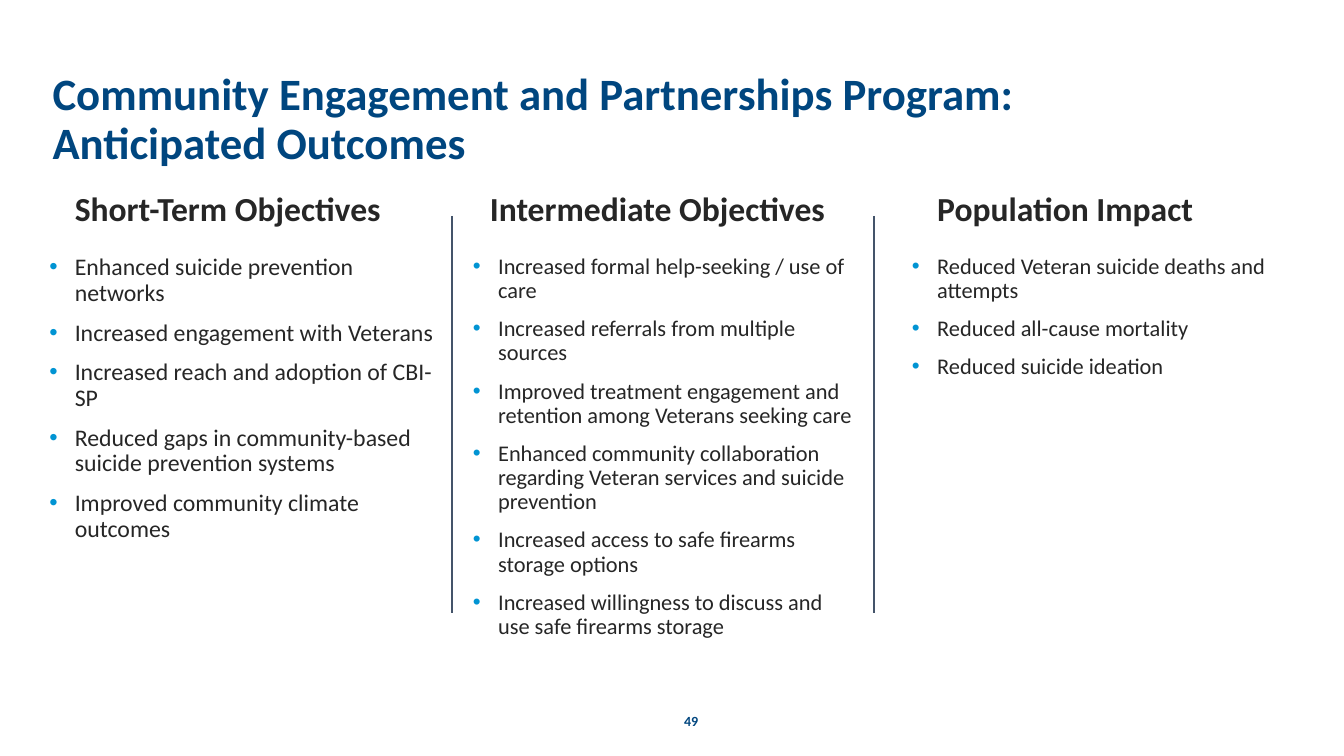
from lxml import etree
from pptx import Presentation
from pptx.dml.color import RGBColor
from pptx.enum.shapes import MSO_CONNECTOR
from pptx.enum.text import MSO_ANCHOR, MSO_AUTO_SIZE, PP_ALIGN
from pptx.oxml.ns import qn
from pptx.util import Cm, Pt

TOP, MIDDLE, BOTTOM = MSO_ANCHOR.TOP, MSO_ANCHOR.MIDDLE, MSO_ANCHOR.BOTTOM
LEFT, CENTER = PP_ALIGN.LEFT, PP_ALIGN.CENTER
FIXED = MSO_AUTO_SIZE.NONE
LINE = MSO_CONNECTOR.STRAIGHT
FONT = "Calibri"
NAVY, BLUE, INK, SLATE = "00467F", "0194D3", "262626", "44546A"
HEAD_TOP, LIST_TOP = 4.29, 6.3

COLUMNS = [
    {
        "head": "Short-Term Objectives",
        "head_x": 1.63, "head_w": 8.81,
        "box": (0.99, LIST_TOP, 10.39, 10.11),
        "size": 17,
        "items": [
            "Enhanced suicide prevention networks",
            "Increased engagement with Veterans",
            "Increased reach and adoption of CBI-SP",
            "Reduced gaps in community-based suicide prevention systems",
            "Improved community climate outcomes",
        ],
    },
    {
        "head": "Intermediate Objectives",
        "head_x": 12.09, "head_w": 9.22,
        "box": (11.66, LIST_TOP, 10.11, 10.67),
        "size": 16,
        "items": [
            "Increased formal help-seeking / use of care",
            "Increased referrals from multiple sources",
            "Improved treatment engagement and retention among Veterans seeking care ",
            "Enhanced community collaboration regarding Veteran services and suicide prevention",
            "Increased access to safe firearms storage options",
            "Increased willingness to discuss and use safe firearms storage",
        ],
    },
    {
        "head": "Population Impact",
        "head_x": 23.37, "head_w": 7.44,
        "box": (22.73, LIST_TOP, 10.34, 3.99),
        "size": 16,
        "items": [
            "Reduced Veteran suicide deaths and attempts",
            "Reduced all-cause mortality",
            "Reduced suicide ideation",
        ],
    },
]


def color(code):
    return RGBColor.from_string(code)


def place(shape, box):
    shape.left, shape.top, shape.width, shape.height = map(Cm, box)


def bullet(para):
    props = para._p.get_or_add_pPr()
    props.set("marL", str(Cm(0.64)))
    props.set("indent", str(-Cm(0.64)))
    tint = etree.SubElement(props, qn("a:buClr"))
    etree.SubElement(tint, qn("a:srgbClr"), val=BLUE)
    etree.SubElement(props, qn("a:buFont"), typeface="Arial")
    etree.SubElement(props, qn("a:buChar"), char="•")


def write(shape, lines, size=16, tint=INK, bold=False, anchor=TOP,
          align=LEFT, marks=False, space=0.9):
    frame = shape.text_frame
    frame.word_wrap = True
    frame.auto_size = FIXED
    frame.vertical_anchor = anchor
    for i, line in enumerate(lines):
        para = frame.add_paragraph() if i else frame.paragraphs[0]
        para.alignment = align
        para.line_spacing = space
        para.space_before = Pt(10 if i else 0)
        if marks:
            bullet(para)
        run = para.add_run()
        run.text = line
        run.font.name = FONT
        run.font.size = Pt(size)
        run.font.bold = bold
        run.font.color.rgb = color(tint)


def add_title(slide, box):
    title = slide.shapes.title
    place(title, box)
    write(title, ["Community Engagement and Partnerships Program: Anticipated Outcomes"],
          size=32, tint=NAVY, bold=True, anchor=MIDDLE)


def add_column(head, body, data):
    place(head, (data["head_x"], HEAD_TOP, data["head_w"], 1.6))
    write(head, [data["head"]], size=24, bold=True, anchor=BOTTOM)
    place(body, data["box"])
    write(body, data["items"], size=data["size"], marks=True)


def add_rule(slide, x, top, height):
    rule = slide.shapes.add_connector(LINE, Cm(x), Cm(top), Cm(x), Cm(top + height))
    rule.line.color.rgb = color(SLATE)
    rule.line.width = Pt(1.5)
    etree.SubElement(rule._element.spPr, qn("a:effectLst"))


def add_box(slide):
    return slide.shapes.add_textbox(0, 0, Cm(1), Cm(1))


def add_number(slide, box):
    number = add_box(slide)
    place(number, box)
    write(number, ["49"], size=10, tint=NAVY, bold=True, anchor=MIDDLE,
          align=CENTER, space=1.0)


def main():
    deck = Presentation()
    deck.slide_width, deck.slide_height = Cm(33.87), Cm(19.05)
    slide = deck.slides.add_slide(deck.slide_layouts[4])
    add_title(slide, (1.07, 1.17, 30.3, 3.73))
    holders = slide.placeholders
    pairs = [
        (holders[1], holders[2]),
        (holders[3], holders[4]),
        (add_box(slide), add_box(slide)),
    ]
    for (head, body), data in zip(pairs, COLUMNS):
        add_column(head, body, data)
    for x in (11.38, 22.02):
        add_rule(slide, x, 5.44, 10)
    add_number(slide, (13.61, 17.65, 7.62, 1.02))
    deck.save("out.pptx")


if __name__ == "__main__":
    main()
